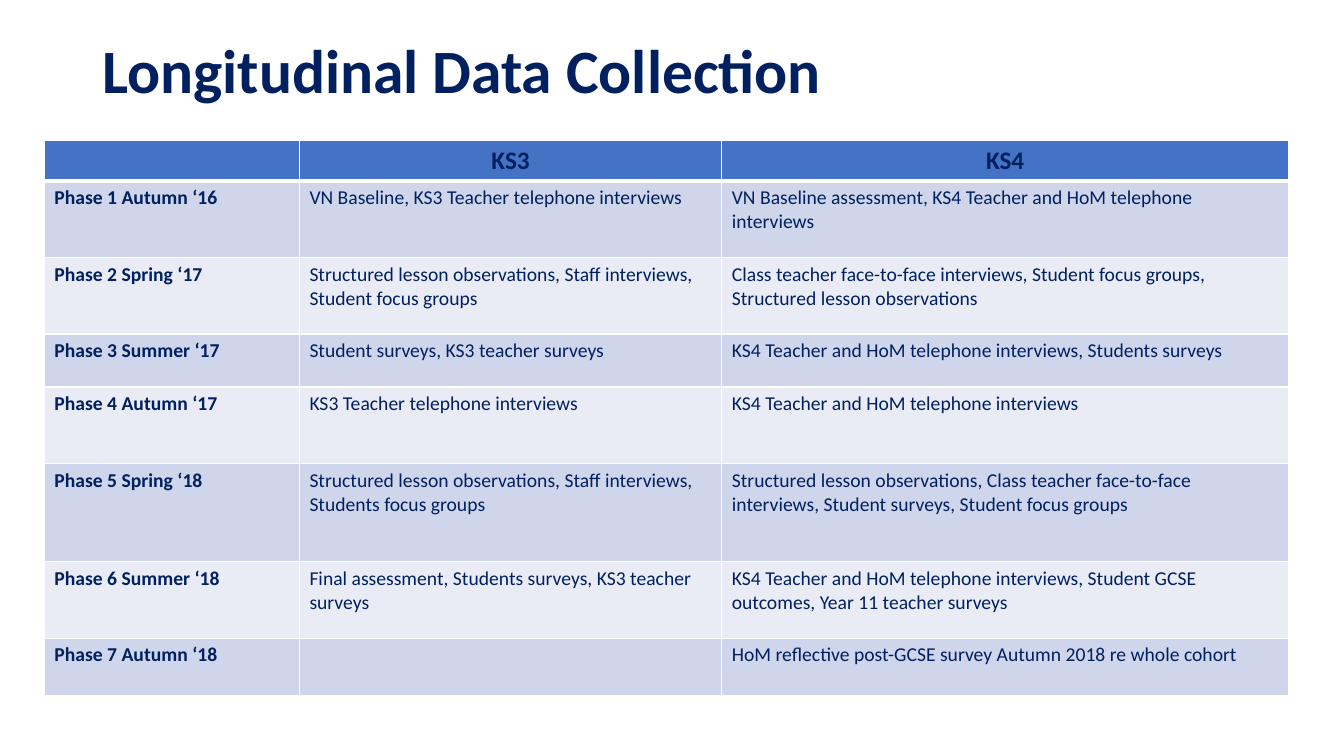
"""Build a slide with a table of data collection phases."""
import pptx
import pptx.util
import pptx.dml.color
import pptx.enum.text
import pptx.oxml
import pptx.oxml.ns

TITLE = "Longitudinal Data Collection"
ROWS = [
    ("", "KS3", "KS4"),
    ("Phase 1 Autumn ‘16",
     "VN Baseline, KS3 Teacher telephone interviews",
     "VN Baseline assessment, KS4 Teacher and HoM telephone interviews"),
    ("Phase 2 Spring ‘17",
     "Structured lesson observations, Staff interviews, Student focus groups",
     "Class teacher face-to-face interviews, Student focus groups, Structured lesson observations"),
    ("Phase 3 Summer ‘17",
     "Student surveys, KS3 teacher surveys",
     "KS4 Teacher and HoM telephone interviews, Students surveys"),
    ("Phase 4 Autumn ‘17",
     "KS3 Teacher telephone interviews",
     "KS4 Teacher and HoM telephone interviews"),
    ("Phase 5 Spring ‘18",
     "Structured lesson observations, Staff interviews, Students focus groups",
     "Structured lesson observations, Class teacher face-to-face interviews, "
     "Student surveys, Student focus groups"),
    ("Phase 6 Summer ‘18",
     "Final assessment, Students surveys, KS3 teacher surveys",
     "KS4 Teacher and HoM telephone interviews, Student GCSE outcomes, Year 11 teacher surveys"),
    ("Phase 7 Autumn ‘18",
     "",
     "HoM reflective post-GCSE survey Autumn 2018 re whole cohort"),
]
WIDTHS = [182.2, 301.7, 404.8]
HEIGHTS = [28.5, 54.7, 54.7, 37.8, 54.7, 70.2, 54.7, 40.7]
NAVY, HEAD, BANDS = "002060", "4472C4", ("E9EBF5", "CFD5EA")

Pt = pptx.util.Pt
Align = pptx.enum.text.PP_ALIGN
Anchor = pptx.enum.text.MSO_ANCHOR


def color(code):
    return pptx.dml.color.RGBColor.from_string(code)


def write(para, text, size, bold):
    run = para.add_run()
    run.text = text
    font = run.font
    font.name, font.size, font.bold = "Calibri", Pt(size), bold
    font.color.rgb = color(NAVY)


def edge(cell, side, width):
    space = pptx.oxml.ns.nsdecls("a")
    line = pptx.oxml.parse_xml(
        f'<a:ln{side} {space} w="{Pt(width)}"><a:solidFill>'
        f'<a:srgbClr val="FFFFFF"/></a:solidFill></a:ln{side}>')
    cell._tc.get_or_add_tcPr().append(line)


def paint(cell, text, row, col):
    for side in "LRTB":
        thick = (row, side) in ((0, "B"), (1, "T"))
        edge(cell, side, 3 if thick else 1)
    cell.fill.solid()
    cell.fill.fore_color.rgb = color(BANDS[row % 2] if row else HEAD)
    para = cell.text_frame.paragraphs[0]
    if row == 0:
        para.alignment = Align.CENTER
    if text:
        write(para, text, 14 if row else 18, row == 0 or col == 0)
    else:
        para.font.size = Pt(14)


def main():
    deck = pptx.Presentation()
    deck.slide_width, deck.slide_height = Pt(960), Pt(540)
    slide = deck.slides.add_slide(deck.slide_layouts[6])

    box = slide.shapes.add_textbox(Pt(66), Pt(0), Pt(828), Pt(104.4))
    frame = box.text_frame
    frame.word_wrap = True
    frame.vertical_anchor = Anchor.MIDDLE
    para = frame.paragraphs[0]
    para.line_spacing = 0.9
    write(para, TITLE, 44, True)

    grid = slide.shapes.add_table(
        len(ROWS), len(WIDTHS), Pt(31.7), Pt(100.4),
        Pt(sum(WIDTHS)), Pt(sum(HEIGHTS))).table
    for col, width in zip(grid.columns, WIDTHS):
        col.width = Pt(width)
    for row, height in zip(grid.rows, HEIGHTS):
        row.height = Pt(height)
    for r, texts in enumerate(ROWS):
        for c, text in enumerate(texts):
            paint(grid.cell(r, c), text, r, c)

    deck.save("out.pptx")


if __name__ == "__main__":
    main()
